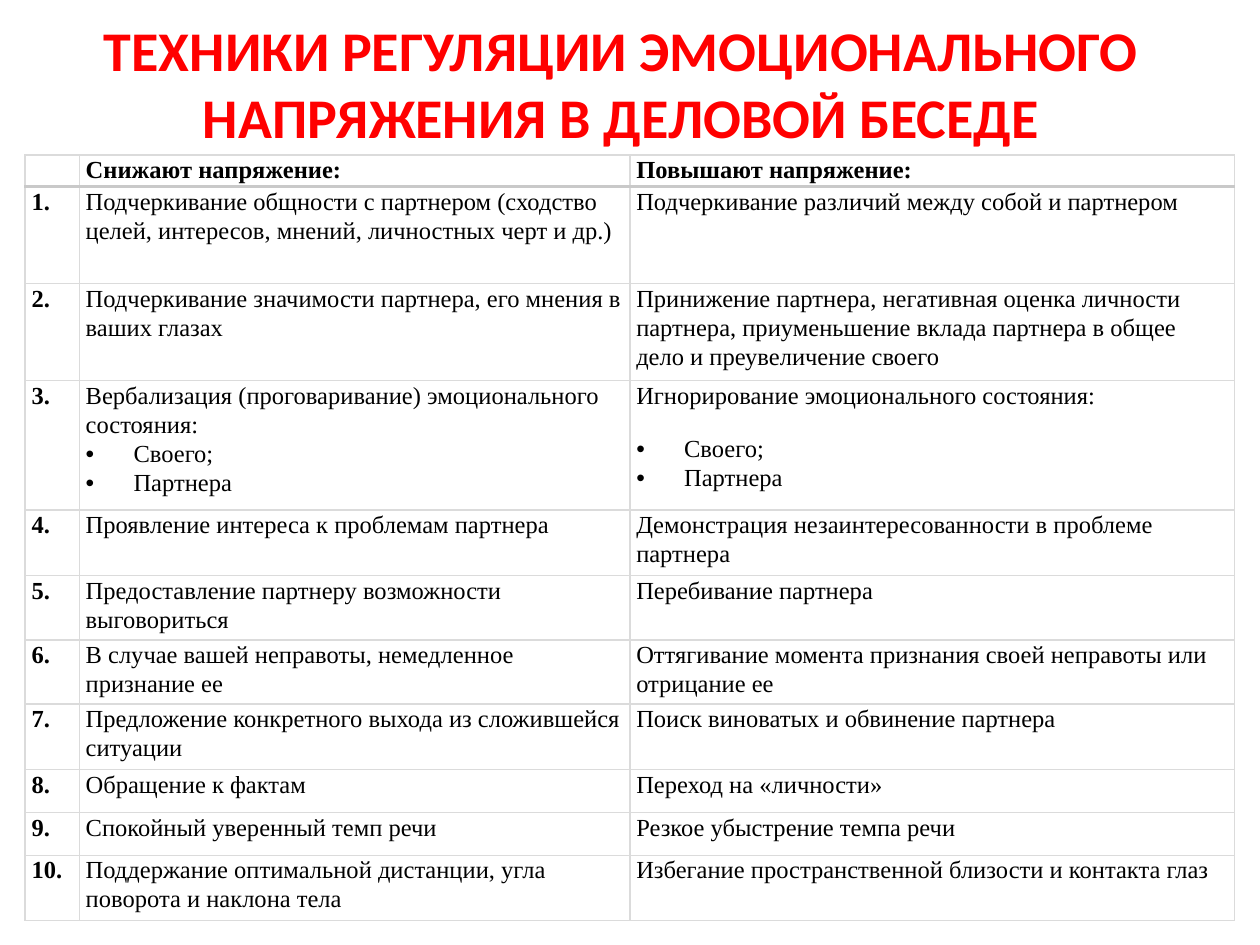
from lxml.etree import SubElement
from pptx import Presentation
from pptx.dml.color import RGBColor
from pptx.enum.text import MSO_ANCHOR as Anchor, PP_ALIGN as Align
from pptx.oxml.ns import qn
from pptx.util import Inches, Pt

TITLE = "ТЕХНИКИ РЕГУЛЯЦИИ ЭМОЦИОНАЛЬНОГО НАПРЯЖЕНИЯ В ДЕЛОВОЙ БЕСЕДЕ"
HEADS = ("", "Снижают напряжение:", "Повышают напряжение:")
STATES = ("Своего;", "Партнера")
PAIRS = [
    ("Подчеркивание общности с партнером (сходство целей, интересов, мнений, личностных черт и др.)",
     "Подчеркивание различий между собой и партнером"),
    ("Подчеркивание значимости партнера, его мнения в ваших глазах",
     "Принижение партнера, негативная оценка личности партнера, "
     "приуменьшение вклада партнера в общее дело и преувеличение своего"),
    ("Вербализация (проговаривание) эмоционального состояния:",
     "Игнорирование эмоционального состояния:"),
    ("Проявление интереса к проблемам партнера",
     "Демонстрация незаинтересованности в проблеме партнера"),
    ("Предоставление партнеру возможности выговориться",
     "Перебивание партнера"),
    ("В случае вашей неправоты, немедленное признание ее",
     "Оттягивание момента признания своей неправоты или отрицание ее"),
    ("Предложение конкретного выхода из сложившейся ситуации",
     "Поиск виноватых и обвинение партнера"),
    ("Обращение к фактам", "Переход на «личности»"),
    ("Спокойный уверенный темп речи", "Резкое убыстрение темпа речи"),
    ("Поддержание оптимальной дистанции, угла поворота и наклона тела",
     "Избегание пространственной близости и контакта глаз"),
]
COLS = (0.43, 4.37, 4.8)
ROWS = (0.25, 0.77, 0.77, 1.03, 0.52, 0.51, 0.51, 0.52, 0.34, 0.34, 0.52)
STATE_ROW = 3


def paint(code):
    """Return the colour for a hex string."""
    return RGBColor.from_string(code)


def write(par, text, size=14, font="Times New Roman", color="000000",
          bold=False, align=Align.LEFT, space=1.07, before=0):
    """Fill a paragraph with formatted text."""
    par.alignment = align
    par.line_spacing = space
    par.space_before = Pt(before)
    if not text:
        SubElement(par._p, qn("a:endParaRPr"), sz=str(size * 100))
        return
    run = par.add_run()
    run.text = text
    run.font.size = Pt(size)
    run.font.name = font
    run.font.bold = bold
    run.font.color.rgb = paint(color)


def add_bullet(par):
    """Give a paragraph a hanging bullet."""
    props = par._p.get_or_add_pPr()
    indent = Inches(0.38)
    props.set("marL", str(indent))
    props.set("indent", str(-indent))
    SubElement(props, qn("a:buFont"), typeface="Arial")
    SubElement(props, qn("a:buChar"), char="•")


def add_edge(cell, side, color="DBDBDB", width=1):
    """Draw one border of a cell."""
    line = SubElement(cell._tc.get_or_add_tcPr(), qn(f"a:ln{side}"),
                      w=str(Pt(width)))
    fill = SubElement(line, qn("a:solidFill"))
    SubElement(fill, qn("a:srgbClr"), val=color)


def style_cell(cell, row):
    """Set the margins, borders and fill of a cell."""
    cell.margin_left = cell.margin_right = Inches(0.05)
    cell.margin_top = cell.margin_bottom = 0
    heavy = {"color": "C9C9C9", "width": 1.5}
    edges = {"L": {}, "R": {}, "T": heavy if row == 1 else {},
             "B": heavy if row == 0 else {}}
    for side, look in edges.items():
        add_edge(cell, side, **look)
    cell.fill.background()


def add_title(slide, left, top, width, height):
    """Place the heading in its box."""
    box = slide.shapes.add_textbox(left, top, width, height)
    frame = box.text_frame
    frame.word_wrap = True
    frame.vertical_anchor = Anchor.MIDDLE
    write(frame.paragraphs[0], TITLE, size=32, font="Calibri",
          color="FF0000", bold=True, align=Align.CENTER, space=1.0)


def add_grid(slide, left, top, width, height):
    """Place the table of techniques in its box."""
    lines = [HEADS] + [(f"{num}.", *pair) for num, pair in enumerate(PAIRS, 1)]
    table = slide.shapes.add_table(len(ROWS), len(COLS), left, top,
                                   width, height).table
    table.first_row = table.horz_banding = False
    for col, size in zip(table.columns, COLS):
        col.width = Inches(size)
    for row, size in zip(table.rows, ROWS):
        row.height = Inches(size)
    for row, texts in enumerate(lines):
        for col, text in enumerate(texts):
            cell = table.cell(row, col)
            style_cell(cell, row)
            frame = cell.text_frame
            write(frame.paragraphs[0], text, bold=row == 0 or col == 0)
            if row == STATE_ROW and col > 0:
                for spot, state in enumerate(STATES):
                    par = frame.add_paragraph()
                    gap = 14 if col == 2 and spot == 0 else 0
                    write(par, state, before=gap)
                    add_bullet(par)


def main():
    """Build the slide and save it."""
    deck = Presentation()
    deck.slide_width, deck.slide_height = Inches(10), Inches(7.5)
    slide = deck.slides.add_slide(deck.slide_layouts[6])
    add_title(slide, Inches(0.43), Inches(0.03), Inches(9), Inches(1.25))
    add_grid(slide, Inches(0.2), Inches(1.23), Inches(sum(COLS)),
             Inches(sum(ROWS)))
    deck.save("out.pptx")


if __name__ == "__main__":
    main()
